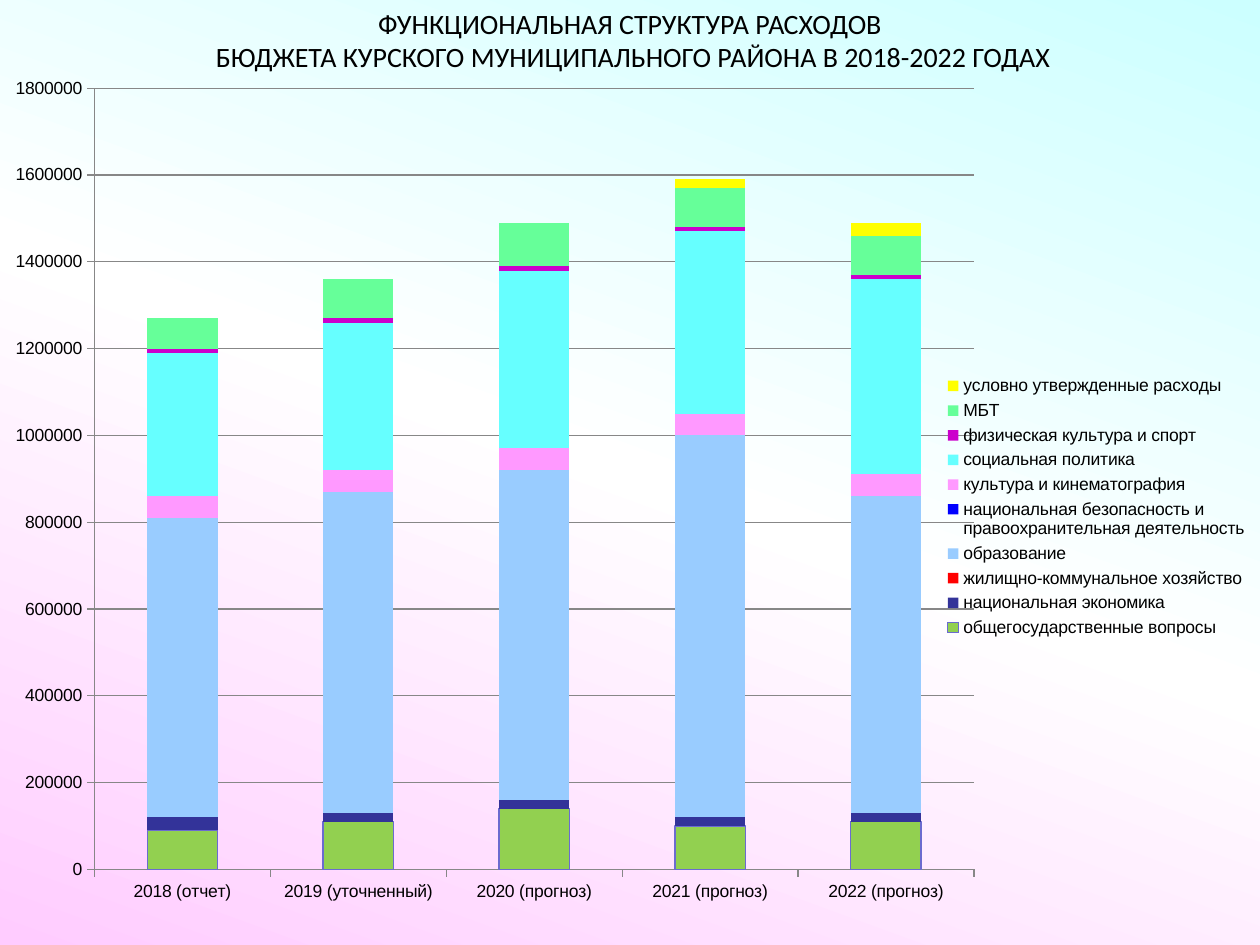
"""Build a slide with a stacked column chart of district budget spending."""
from copy import deepcopy

from lxml import etree
from pptx import Presentation
from pptx.chart.data import CategoryChartData
from pptx.dml.color import RGBColor
from pptx.enum.chart import XL_CHART_TYPE, XL_LEGEND_POSITION, XL_TICK_MARK
from pptx.enum.text import MSO_AUTO_SIZE, PP_ALIGN
from pptx.oxml.ns import qn
from pptx.util import Inches, Pt

STACKED = XL_CHART_TYPE.COLUMN_STACKED
RIGHT = XL_LEGEND_POSITION.RIGHT
OUTSIDE = XL_TICK_MARK.OUTSIDE
NO_TICK = XL_TICK_MARK.NONE
CENTER = PP_ALIGN.CENTER
GROW = MSO_AUTO_SIZE.SHAPE_TO_FIT_TEXT

THEME = {
    "background": [(0, "CCFFFF"), (0.5, "FFFFFF"), (1, "FFCCFF")],
    "background_angle": 250,
    "text": "000000",
    "grid": "878787",
    "outline": "6B6BCF",
    "title_font": "Calibri",
    "title_size": 16,
    "chart_font": "Arial",
    "chart_size": 10,
}
TITLE_LINES = [
    "ФУНКЦИОНАЛЬНАЯ СТРУКТУРА РАСХОДОВ",
    " БЮДЖЕТА КУРСКОГО МУНИЦИПАЛЬНОГО РАЙОНА В 2018-2022 ГОДАХ",
]
YEARS = ["2018 (отчет)", "2019 (уточненный)", "2020 (прогноз)",
         "2021 (прогноз)", "2022 (прогноз)"]
UNIT = 10000
SPENDING = [
    ("общегосударственные вопросы", "92D050", [9, 11, 14, 10, 11]),
    ("национальная экономика", "333399", [3, 2, 2, 2, 2]),
    ("жилищно-коммунальное хозяйство", "FF0000", [0, 0, 0, 0, 0]),
    ("образование ", "99CCFF", [69, 74, 76, 88, 73]),
    ("национальная безопасность и правоохранительная деятельность", "0000FF",
     [0, 0, 0, 0, 0]),
    ("культура и кинематография", "FF99FF", [5, 5, 5, 5, 5]),
    ("социальная политика", "66FFFF", [33, 34, 41, 42, 45]),
    ("физическая культура и спорт", "CC00CC", [1, 1, 1, 1, 1]),
    ("МБТ", "66FF99", [7, 9, 10, 9, 9]),
    ("условно утвержденные расходы", "FFFF00", [None, None, None, 2, 3]),
]
PLOT_AREA = (0.075, 0.022, 0.698, 0.892)
LEGEND_AREA = (0.745, 0.345, 0.25, 0.31)


def write_paragraph(paragraph, text, font, size, color, alignment):
    paragraph.alignment = alignment
    run = paragraph.add_run()
    run.text = text
    run.font.name = font
    run.font.size = Pt(size)
    run.font.color.rgb = RGBColor.from_string(color)


def set_layout(parent, area, position, inner=False):
    for old in parent.findall(qn("c:layout")):
        parent.remove(old)
    layout = etree.Element(qn("c:layout"))
    manual = etree.SubElement(layout, qn("c:manualLayout"))
    settings = [("layoutTarget", "inner")] if inner else []
    settings += [("xMode", "edge"), ("yMode", "edge"), *zip("xywh", area)]
    for tag, value in settings:
        etree.SubElement(manual, qn(f"c:{tag}")).set("val", str(value))
    parent.insert(position, layout)


presentation = Presentation()
presentation.slide_width = Inches(10)
presentation.slide_height = Inches(7.5)
width, height = presentation.slide_width, presentation.slide_height
slide = presentation.slides.add_slide(presentation.slide_layouts[6])

background = slide.background.fill
background.gradient()
background.gradient_angle = THEME["background_angle"]
stop_list = slide.element.find(".//" + qn("a:gsLst"))
stop_list.append(deepcopy(stop_list[0]))
for stop, (position, color) in zip(background.gradient_stops, THEME["background"]):
    stop.position = position
    stop.color.rgb = RGBColor.from_string(color)

chart_top = int(height * 0.073)
chart_data = CategoryChartData(number_format="General")
chart_data.categories = YEARS
for name, color, values in SPENDING:
    chart_data.add_series(
        name, [None if value is None else value * UNIT for value in values])

title = slide.shapes.add_textbox(0, 0, width, int(height * 0.085))
title.text_frame.word_wrap = True
title.text_frame.auto_size = GROW
for index, line in enumerate(TITLE_LINES):
    paragraph = title.text_frame.add_paragraph() if index else title.text_frame.paragraphs[0]
    write_paragraph(paragraph, line, font=THEME["title_font"], size=THEME["title_size"],
                    color=THEME["text"], alignment=CENTER)

chart = slide.shapes.add_chart(
    STACKED, 0, chart_top, width, height - chart_top, chart_data).chart
chart.has_title = False
chart.font.name = THEME["chart_font"]
chart.font.size = Pt(THEME["chart_size"])
chart.font.color.rgb = RGBColor.from_string(THEME["text"])

plot = chart.plots[0]
plot.gap_width = 150
plot.overlap = 100
plot.vary_by_categories = False
for series, (name, color, values) in zip(plot.series, SPENDING):
    series.format.fill.solid()
    series.format.fill.fore_color.rgb = RGBColor.from_string(color)
outline = plot.series[0].format.line
outline.width = Pt(0.75)
outline.color.rgb = RGBColor.from_string(THEME["outline"])

value_axis = chart.value_axis
value_axis.minimum_scale = 0
value_axis.maximum_scale = 180 * UNIT
value_axis.major_unit = 20 * UNIT
value_axis.has_major_gridlines = True
for axis in (chart.category_axis, value_axis):
    axis.major_tick_mark = OUTSIDE
    axis.minor_tick_mark = NO_TICK
for line in (chart.category_axis.format.line, value_axis.format.line,
             value_axis.major_gridlines.format.line):
    line.width = Pt(0.75)
    line.color.rgb = RGBColor.from_string(THEME["grid"])

chart.has_legend = True
chart.legend.position = RIGHT
chart.legend.include_in_layout = False
chart_space = chart.element
set_layout(chart_space.find(".//" + qn("c:plotArea")), PLOT_AREA, 0, inner=True)
set_layout(chart_space.find(".//" + qn("c:legend")), LEGEND_AREA, 1)

presentation.save("out.pptx")
